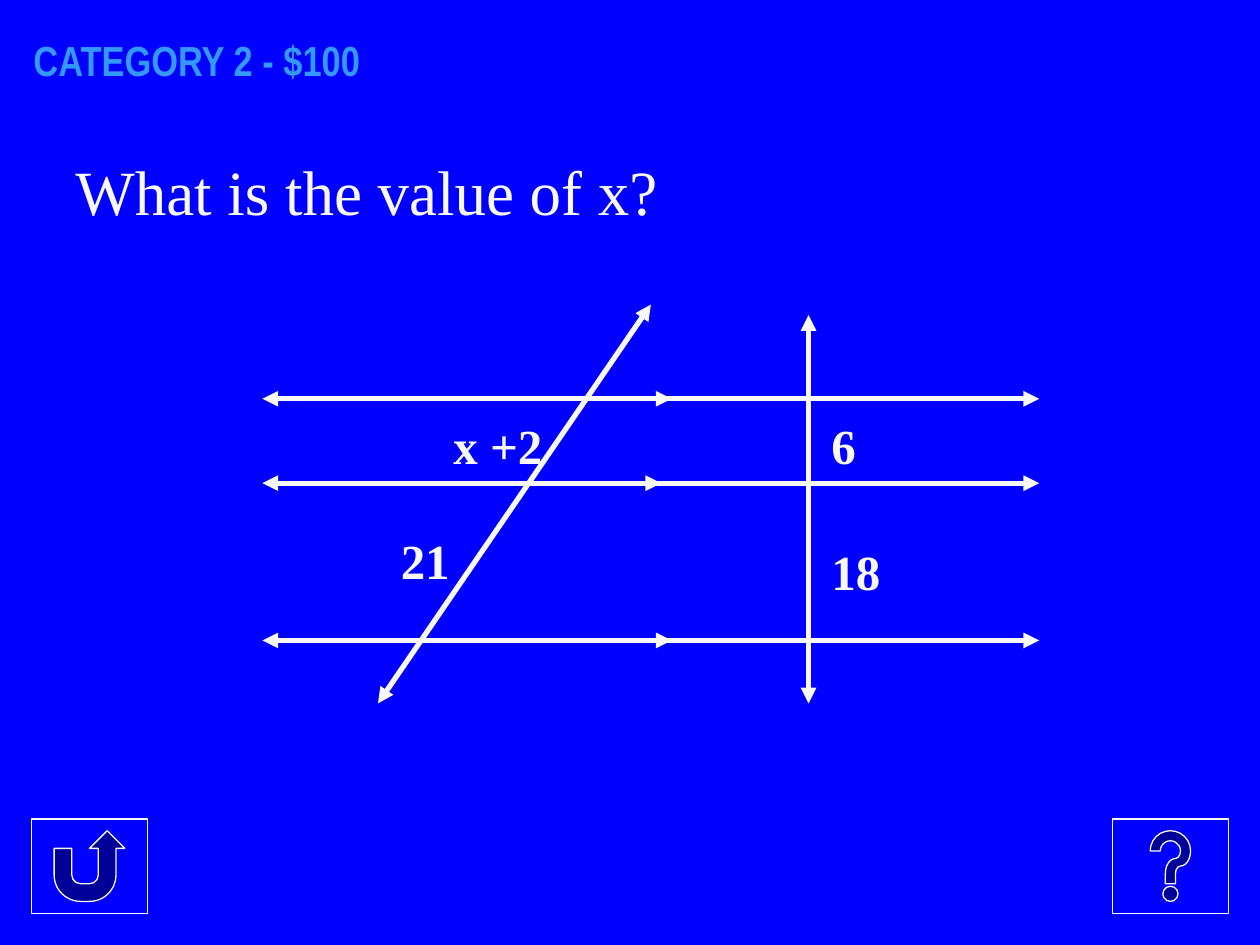
from lxml import etree
from pptx import Presentation, util as u
from pptx.dml.color import RGBColor
from pptx.enum import shapes, text
from pptx.oxml import ns

BLUE = RGBColor(0x00, 0x00, 0xFF)
SKY = RGBColor(0x33, 0x99, 0xFF)
WHITE = RGBColor(0xF8, 0xF8, 0xF8)


class QuizSlide:
    """Holds the style and the slide being built."""

    serif = "Times New Roman"
    heading = "Arial Narrow"

    def __init__(self, deck):
        self.slide = deck.slides.add_slide(deck.slide_layouts[5])
        self.slide.background.fill.solid()
        self.slide.background.fill.fore_color.rgb = BLUE
        self.diagram = None

    def set_text(self, box, words, size, font=serif, color=WHITE, bold=False):
        frame = box.text_frame
        frame.word_wrap = True
        para = frame.paragraphs[0]
        para.text = words
        para.alignment = text.PP_ALIGN.LEFT
        para.font.size = u.Pt(size)
        para.font.name = font
        para.font.bold = bold
        para.font.color.rgb = color
        return para

    def title(self, words, left, top, width, height):
        box = self.slide.shapes.title
        box.left, box.top, box.width, box.height = map(u.Cm, (left, top, width, height))
        frame = box.text_frame
        frame.auto_size = text.MSO_AUTO_SIZE.NONE
        frame.vertical_anchor = text.MSO_ANCHOR.MIDDLE
        frame.margin_top, frame.margin_bottom = 0, u.Cm(0.13)
        self.set_text(box, words, 24, self.heading, SKY, True)

    def panel(self, kind, left, top, width, height, outlined=False):
        box = self.slide.shapes.add_shape(kind, *map(u.Cm, (left, top, width, height)))
        box.shadow.inherit = False
        box.fill.solid()
        box.fill.fore_color.rgb = BLUE
        if outlined:
            box.line.color.rgb = WHITE
            box.line.width = u.Pt(0.75)
        else:
            box.line.fill.background()
        return box

    def question(self, words, left, top, width, height):
        box = self.panel(shapes.MSO_SHAPE.RECTANGLE, left, top, width, height)
        box.text_frame.vertical_anchor = text.MSO_ANCHOR.TOP
        self.set_text(box, words, 36).space_before = u.Pt(4)

    def start_diagram(self):
        self.diagram = self.slide.shapes.add_group_shape()

    def arrow(self, x1, y1, x2, y2, both_ends=True):
        line = self.diagram.shapes.add_connector(
            shapes.MSO_CONNECTOR.STRAIGHT, *map(u.Cm, (x1, y1, x2, y2)))
        line.line.color.rgb = WHITE
        line.line.width = u.Pt(3)
        properties = line._element.spPr
        stroke = properties.find(ns.qn("a:ln"))
        for end in ("a:headEnd", "a:tailEnd") if both_ends else ("a:tailEnd",):
            etree.SubElement(stroke, ns.qn(end), type="triangle")
        etree.SubElement(properties, ns.qn("a:effectLst"))

    def label(self, words, left, top):
        box = self.slide.shapes.add_textbox(*map(u.Cm, (left, top, 3.18, 1.45)))
        self.set_text(box, words, 28, bold=True).space_before = u.Pt(3)
        box.text_frame.auto_size = text.MSO_AUTO_SIZE.SHAPE_TO_FIT_TEXT


def main():
    deck = Presentation()
    deck.slide_width, deck.slide_height = u.Cm(25.4), u.Cm(19.05)
    page = QuizSlide(deck)

    # Heading, question and navigation buttons
    page.title("CATEGORY 2 - $100", 0.42, 0.64, 21.59, 1.27)
    for kind, left in ((shapes.MSO_SHAPE.ACTION_BUTTON_HELP, 22.43),
                       (shapes.MSO_SHAPE.ACTION_BUTTON_RETURN, 0.64)):
        page.panel(kind, left, 16.51, 2.33, 1.9, outlined=True)
    page.question("What is the value of x?", 1.27, 2.96, 22.65, 12.49)

    # Parallel lines, each with an inner arrow marking it as parallel
    page.start_diagram()
    for y, mark_start in ((9.74, 7.83), (8.04, 8.04), (12.91, 8.04)):
        page.arrow(5.29, y, 20.95, y)
        page.arrow(mark_start, y, mark_start + 5.5, y, both_ends=False)

    # Transversals
    page.arrow(7.62, 14.18, 13.12, 6.14)
    page.arrow(16.3, 6.35, 16.3, 14.18)

    # Segment lengths
    for words, left, top in (("x +2", 8.89, 8.26), ("6", 16.51, 8.26),
                             ("18", 16.51, 10.8), ("21", 7.83, 10.58)):
        page.label(words, left, top)

    deck.save("out.pptx")


if __name__ == "__main__":
    main()
